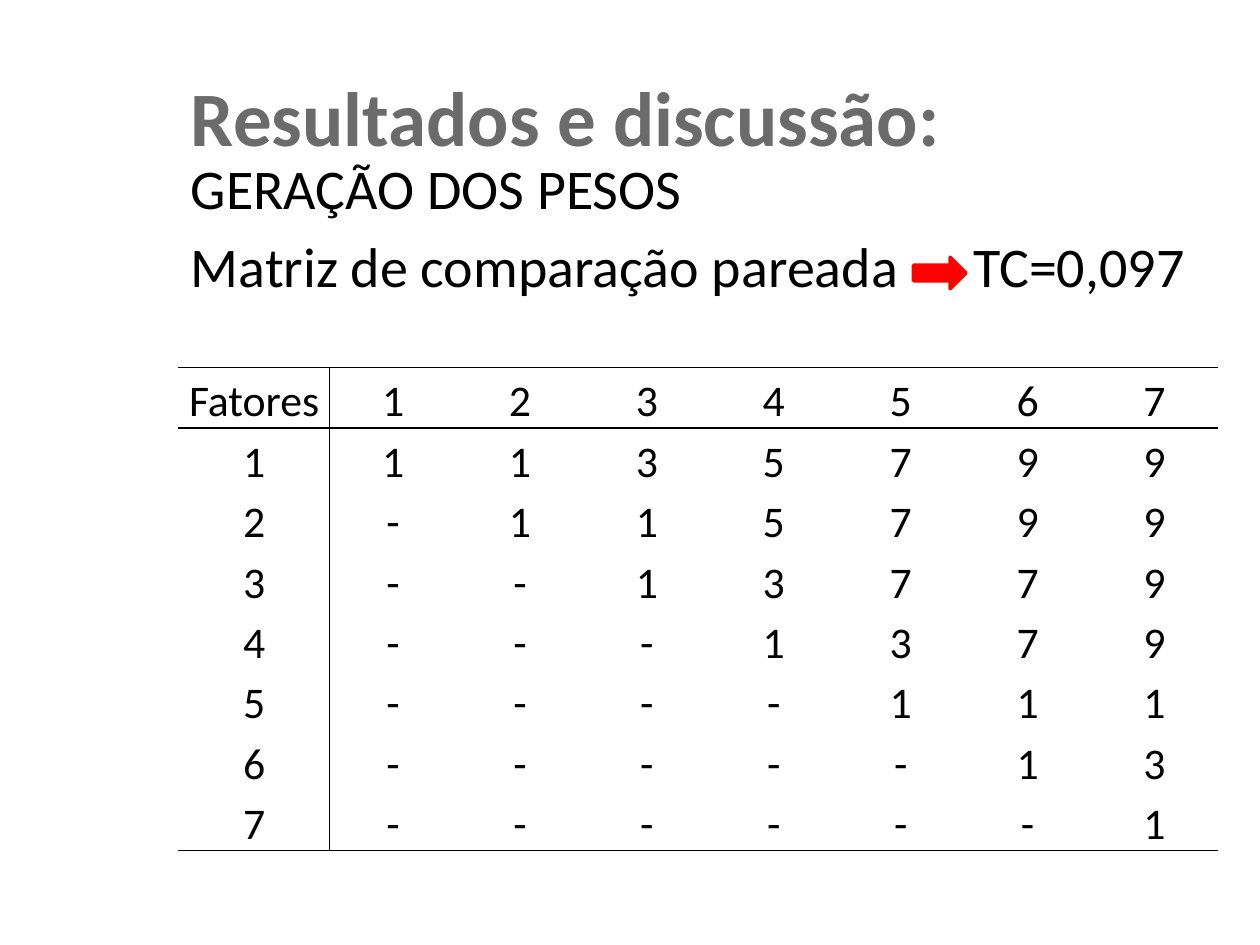
"""Build the slide with the pairwise comparison matrix used to derive the weights."""
import pptx
import pptx.dml.color
import pptx.enum.shapes
import pptx.enum.text
import pptx.oxml
import pptx.oxml.ns
import pptx.util

TITLE = "Resultados e discussão:"
BODY = ["GERAÇÃO DOS PESOS", "Matriz de comparação pareada\tTC=0,097"]
MATRIX = [
    ["Fatores", "1", "2", "3", "4", "5", "6", "7"],
    ["1", "1", "1", "3", "5", "7", "9", "9"],
    ["2", "-", "1", "1", "5", "7", "9", "9"],
    ["3", "-", "-", "1", "3", "7", "7", "9"],
    ["4", "-", "-", "-", "1", "3", "7", "9"],
    ["5", "-", "-", "-", "-", "1", "1", "1"],
    ["6", "-", "-", "-", "-", "-", "1", "3"],
    ["7", "-", "-", "-", "-", "-", "-", "1"],
]
COLORS = {"title": "6B6B6B", "text": "000000", "arrow": "FF0000", "rule": "000000"}
FONT = "Calibri"
WIDTH, HEIGHT = pptx.util.Inches(10), pptx.util.Inches(7.5)
GRID_COLUMNS, GRID_ROWS = 120, 90
BOXES = {
    "body": (17, 14, 101, 76),
    "title": (17, 6, 97, 10),
    "arrow": (87, 24.5, 5, 3),
    "matrix": (17, 35, 99, 46),
}
LABEL_COLUMN = 14.4
RESULT_TAB = 74.5
ALIGN = pptx.enum.text.PP_ALIGN
ANCHOR = pptx.enum.text.MSO_ANCHOR


def across(columns):
    return int(WIDTH * columns / GRID_COLUMNS)


def down(rows):
    return int(HEIGHT * rows / GRID_ROWS)


def place(name):
    left, top, width, height = BOXES[name]
    return across(left), down(top), across(width), down(height)


def color(name):
    return pptx.dml.color.RGBColor.from_string(COLORS[name])


def write(frame, *lines, size, ink="text", bold=False, align=ALIGN.LEFT,
          gap=0, spacing=None, tab=None):
    for index, line in enumerate(lines):
        paragraph = frame.add_paragraph() if index else frame.paragraphs[0]
        paragraph.alignment = align
        paragraph.line_spacing = spacing
        if index:
            paragraph.space_before = pptx.util.Pt(gap)
        if tab and "\t" in line:
            paragraph._p.get_or_add_pPr().append(pptx.oxml.parse_xml(
                f'<a:tabLst {pptx.oxml.ns.nsdecls("a")}><a:tab pos="{tab}" algn="l"/></a:tabLst>'))
        run = paragraph.add_run()
        run.text = line
        run.font.name, run.font.size, run.font.bold = FONT, pptx.util.Pt(size), bold
        run.font.color.rgb = color(ink)


def add_text(slide, name, *lines, anchor=ANCHOR.TOP, **style):
    frame = slide.shapes.add_textbox(*place(name)).text_frame
    frame.word_wrap = True
    frame.vertical_anchor = anchor
    write(frame, *lines, **style)


def set_borders(cell, ruled):
    for side in "LRTB":
        paint = (f'<a:solidFill><a:srgbClr val="{COLORS["rule"]}"/></a:solidFill>'
                 if side in ruled else "<a:noFill/>")
        cell._tc.get_or_add_tcPr().append(pptx.oxml.parse_xml(
            f'<a:ln{side} {pptx.oxml.ns.nsdecls("a")} w="{pptx.util.Pt(1)}">{paint}</a:ln{side}>'))


def add_arrow(slide):
    arrow = slide.shapes.add_shape(
        pptx.enum.shapes.MSO_SHAPE.RIGHT_ARROW, *place("arrow"))
    arrow.shadow.inherit = False
    arrow.fill.solid()
    arrow.fill.fore_color.rgb = color("arrow")
    arrow.line.color.rgb = color("arrow")
    arrow.line.width = pptx.util.Pt(2)


def add_matrix(slide):
    last = len(MATRIX) - 1
    table = slide.shapes.add_table(len(MATRIX), len(MATRIX[0]), *place("matrix")).table
    table.first_row = table.horz_banding = False
    value_column = (BOXES["matrix"][2] - LABEL_COLUMN) / (len(MATRIX[0]) - 1)
    for index, column in enumerate(table.columns):
        column.width = across(value_column if index else LABEL_COLUMN)
    for row, values in enumerate(MATRIX):
        for column, value in enumerate(values):
            cell = table.cell(row, column)
            ruled = {"R"} if column == 0 else {"L"} if column == 1 else set()
            if row < 2:
                ruled.add("T")
            if row in (0, last):
                ruled.add("B")
            set_borders(cell, ruled)
            cell.fill.background()
            cell.margin_left = cell.margin_right = pptx.util.Inches(0.05)
            cell.margin_top = cell.margin_bottom = 0
            cell.vertical_anchor = ANCHOR.BOTTOM
            write(cell.text_frame, value, size=25, align=ALIGN.CENTER, spacing=1.15)


def main():
    presentation = pptx.Presentation()
    presentation.slide_width, presentation.slide_height = WIDTH, HEIGHT
    slide = presentation.slides.add_slide(presentation.slide_layouts[6])
    add_text(slide, "body", *BODY, size=32, align=ALIGN.JUSTIFY, gap=6.4,
             tab=across(RESULT_TAB))
    add_text(slide, "title", TITLE, size=44, ink="title", bold=True, anchor=ANCHOR.MIDDLE)
    add_arrow(slide)
    add_matrix(slide)
    presentation.save("out.pptx")


if __name__ == "__main__":
    main()
